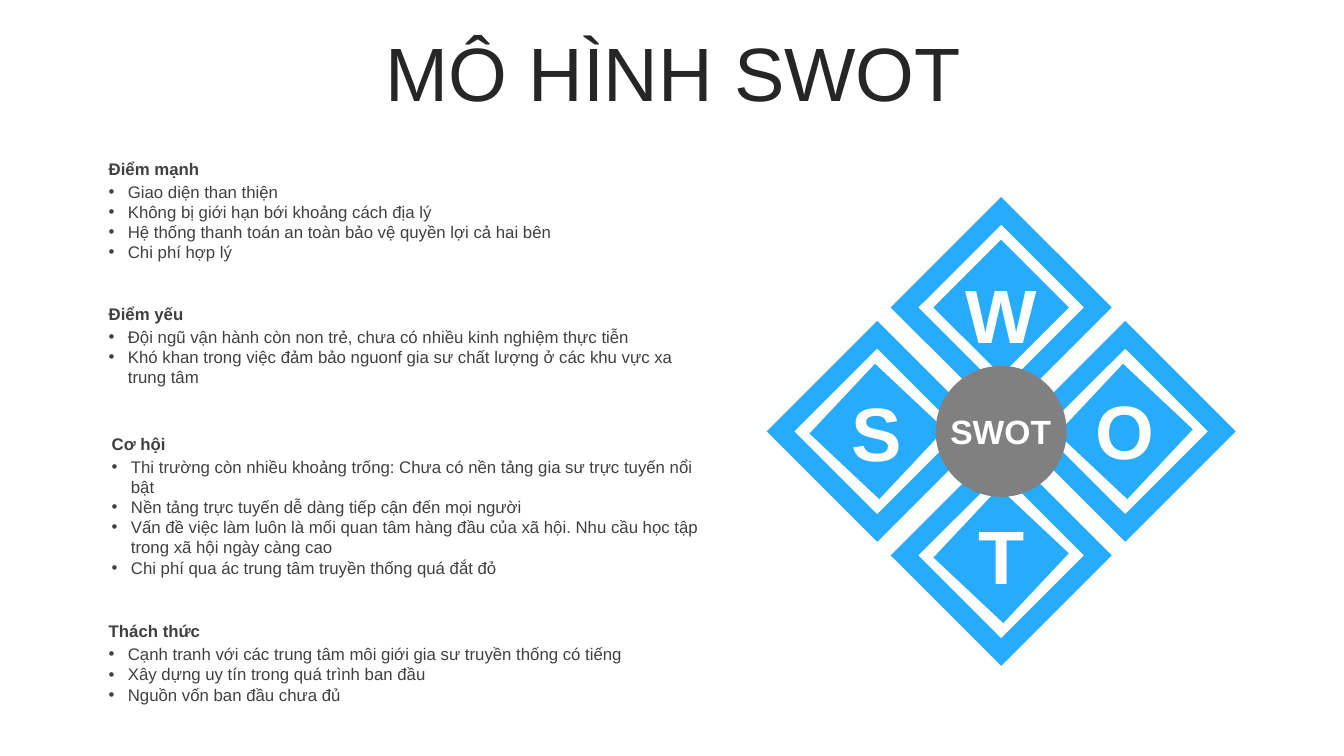
from dataclasses import dataclass

import lxml.etree
import pptx
import pptx.dml.color
import pptx.enum.shapes
import pptx.enum.text
import pptx.oxml.ns
import pptx.shapes.autoshape
import pptx.slide
import pptx.util

Inches = pptx.util.Inches
Shape = pptx.shapes.autoshape.Shape
Preset = pptx.enum.shapes.MSO_SHAPE
Align = pptx.enum.text.PP_ALIGN
Anchor = pptx.enum.text.MSO_ANCHOR
AutoSize = pptx.enum.text.MSO_AUTO_SIZE


@dataclass(frozen=True)
class Theme:
    font: str = "Arial"
    title_color: str = "262626"
    text_color: str = "404040"
    white: str = "FFFFFF"
    blue: str = "27ACFD"
    gray: str = "808080"
    display_size: int = 54
    center_size: int = 24
    text_size: int = 12


@dataclass(frozen=True)
class Section:
    left: float
    top: float
    line_count: int
    heading: str
    points: tuple[str, ...]


@dataclass(frozen=True)
class Diamond:
    letter: str
    column: int
    row: int
    letter_top: float
    core_rotation: float = 313.2


THEME = Theme()
CENTER_X, CENTER_Y, DIAMOND_STEP = 9.93, 4.28, 1.23
CORE_SIZE, FRAME_SIZE, CIRCLE_SIZE = 0.95, 1.55, 1.3
LETTER_WIDTH, LETTER_HEIGHT = 1.18, 1.01
BULLET_INDENT = 0.19

SECTIONS = (
    Section(0.98, 1.52, 4, "Điểm mạnh", (
        "Giao diện than thiện",
        "Không bị giới hạn bới khoảng cách địa lý",
        "Hệ thống thanh toán an toàn bảo vệ quyền lợi cả hai bên",
        "Chi phí hợp lý",
    )),
    Section(0.98, 2.96, 3, "Điểm yếu", (
        "Đội ngũ vận hành còn non trẻ, chưa có nhiều kinh nghiệm thực tiễn",
        "Khó khan trong việc đảm bảo nguonf gia sư chất lượng ở các khu vực xa trung tâm",
    )),
    Section(1.01, 4.25, 6, "Cơ hội", (
        "Thi trường còn nhiều khoảng trống: Chưa có nền tảng gia sư trực tuyến nổi bật",
        "Nền tảng trực tuyến dễ dàng tiếp cận đến mọi người",
        "Vấn đề việc làm luôn là mối quan tâm hàng đầu của xã hội. "
        "Nhu cầu học tập trong xã hội ngày càng cao",
        "Chi phí qua ác trung tâm truyền thống quá đắt đỏ",
    )),
    Section(0.98, 6.11, 3, "Thách thức", (
        "Cạnh tranh với các trung tâm môi giới gia sư truyền thống có tiếng",
        "Xây dựng uy tín trong quá trình ban đầu",
        "Nguồn vốn ban đầu chưa đủ",
    )),
)

DIAMONDS = (
    Diamond("S", -1, 0, 3.78),
    Diamond("W", 0, -1, 2.61, 315),
    Diamond("O", 1, 0, 3.76),
    Diamond("T", 0, 1, 5.0),
)


def write_text(shape: Shape, *texts: str, size: int = THEME.text_size,
               color: str = THEME.text_color, bold: bool = False,
               align: Align = Align.LEFT, anchor: Anchor = Anchor.TOP,
               bullet: bool = False, auto_size: AutoSize = AutoSize.SHAPE_TO_FIT_TEXT) -> None:
    frame = shape.text_frame
    frame.word_wrap = True
    frame.auto_size = auto_size
    frame.vertical_anchor = anchor
    for index, text in enumerate(texts):
        paragraph = frame.paragraphs[0] if index == 0 else frame.add_paragraph()
        paragraph.alignment = align
        run = paragraph.add_run()
        run.text = text
        run.font.name = THEME.font
        run.font.size = pptx.util.Pt(size)
        run.font.bold = bold
        run.font.color.rgb = pptx.dml.color.RGBColor.from_string(color)
        if bullet:
            properties = paragraph._p.get_or_add_pPr()
            properties.set("marL", str(Inches(BULLET_INDENT)))
            properties.set("indent", str(-Inches(BULLET_INDENT)))
            for tag, name, value in (("a:buFont", "typeface", THEME.font), ("a:buChar", "char", "•")):
                mark = lxml.etree.SubElement(properties, pptx.oxml.ns.qn(tag))
                mark.set(name, value)


def add_text(slide: pptx.slide.Slide, left: float, top: float, width: float,
             height: float, *texts: str, **text_format) -> None:
    box = slide.shapes.add_textbox(Inches(left), Inches(top), Inches(width), Inches(height))
    write_text(box, *texts, **text_format)


def add_centered_shape(slide: pptx.slide.Slide, preset: Preset, center_x: float,
                       center_y: float, size: float, color: str, rotation: float = 0) -> None:
    shape = slide.shapes.add_shape(preset, Inches(center_x - size / 2),
                                   Inches(center_y - size / 2), Inches(size), Inches(size))
    shape.rotation = rotation
    shape.shadow.inherit = False
    shape.fill.solid()
    shape.fill.fore_color.rgb = pptx.dml.color.RGBColor.from_string(color)
    shape.line.fill.background()


def add_title(slide: pptx.slide.Slide) -> None:
    title = slide.shapes.title
    title.left, title.top = Inches(0.35), Inches(0.37)
    title.width, title.height = Inches(12.66), Inches(0.79)
    write_text(title, "MÔ HÌNH SWOT", size=THEME.display_size, color=THEME.title_color,
               align=Align.CENTER, anchor=Anchor.MIDDLE, auto_size=AutoSize.NONE)
    paragraph = title.text_frame.paragraphs[0]
    paragraph.line_spacing = 0.9
    paragraph.space_before = pptx.util.Pt(10)


def add_section(slide: pptx.slide.Slide, section: Section) -> None:
    add_text(slide, section.left, section.top, 6.18, 0.3, section.heading,
             bold=True, anchor=Anchor.MIDDLE)
    add_text(slide, section.left, section.top + 0.23, 6.19, 0.11 + 0.2 * section.line_count,
             *section.points, bullet=True)


def add_swot_diagram(slide: pptx.slide.Slide) -> None:
    centers = [(CENTER_X + diamond.column * DIAMOND_STEP, CENTER_Y + diamond.row * DIAMOND_STEP)
               for diamond in DIAMONDS]
    for diamond, (x, y) in zip(DIAMONDS, centers):
        add_centered_shape(slide, Preset.RECTANGLE, x, y, CORE_SIZE, THEME.blue,
                           diamond.core_rotation)
    for x, y in centers:
        add_centered_shape(slide, Preset.FRAME, x, y, FRAME_SIZE, THEME.blue, 45)
    add_centered_shape(slide, Preset.OVAL, CENTER_X, CENTER_Y, CIRCLE_SIZE, THEME.gray)
    for diamond, (x, _) in zip(DIAMONDS, centers):
        add_text(slide, x - LETTER_WIDTH / 2, diamond.letter_top, LETTER_WIDTH, LETTER_HEIGHT,
                 diamond.letter, size=THEME.display_size, color=THEME.white, bold=True,
                 align=Align.CENTER)
    add_text(slide, 9.22, 4.03, 1.41, 0.5, "SWOT", size=THEME.center_size,
             color=THEME.white, bold=True, align=Align.CENTER)


def main() -> None:
    presentation = pptx.Presentation()
    presentation.slide_width, presentation.slide_height = Inches(13.33), Inches(7.5)
    slide = presentation.slides.add_slide(presentation.slide_layouts.get_by_name("Title Only"))
    add_title(slide)
    for section in SECTIONS:
        add_section(slide, section)
    add_swot_diagram(slide)
    presentation.save("out.pptx")


if __name__ == "__main__":
    main()
